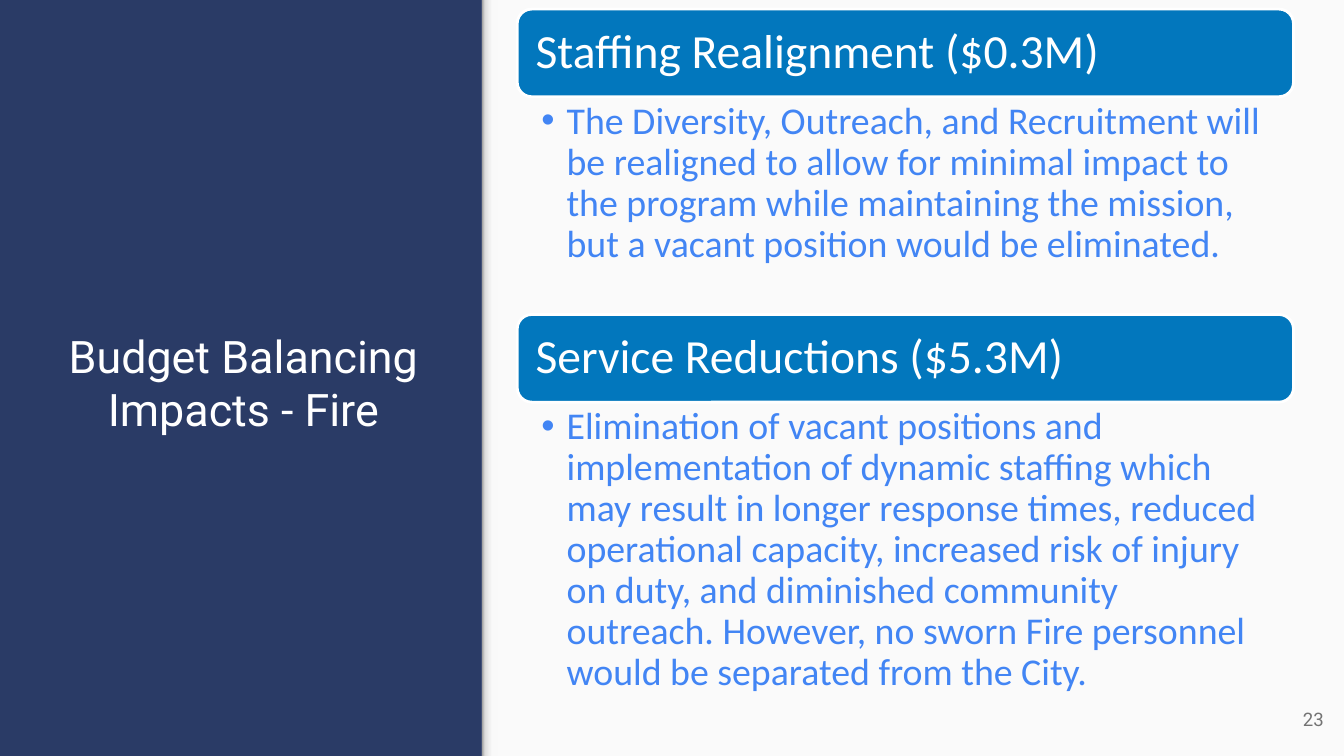
from dataclasses import dataclass

from lxml.etree import SubElement
from pptx import Presentation
from pptx.dml.color import RGBColor
from pptx.enum.shapes import MSO_SHAPE
from pptx.enum.text import MSO_ANCHOR, MSO_AUTO_SIZE, PP_ALIGN
from pptx.oxml.ns import qn
from pptx.shapes.autoshape import Shape
from pptx.slide import Slide
from pptx.util import Emu, Pt

EMU_PER_PX = 9144  # 100 px to the inch
SLIDE_W, SLIDE_H = 1333, 750
PANEL_X = 478
EDGE_W = 16
CARD_X, CARD_W, HEADER_H = 513, 770, 87


@dataclass(frozen=True)
class Theme:
    navy: str = "2A3B66"
    panel: str = "FAFAFA"
    header: str = "0277BD"
    body: str = "4285F4"
    white: str = "FFFFFF"
    grey: str = "737373"
    edge: tuple[tuple[int, str], ...] = (
        (0, "999999"), (20, "DEDEDE"), (64, "F9F9F9"), (100, "F9F9F9"))
    title_font: str = "Roboto"
    card_font: str = "Calibri"
    title_size: float = 32
    header_size: float = 34
    body_size: float = 27
    number_size: float = 13.3


@dataclass(frozen=True)
class Card:
    top: int
    body_h: int
    heading: str
    detail: str


THEME = Theme()
CARDS = (
    Card(9, 216, "Staffing Realignment ($0.3M)",
         "The Diversity, Outreach, and Recruitment will be realigned to allow "
         "for minimal impact to the program while maintaining the mission, but "
         "a vacant position would be eliminated."),
    Card(312, 285, "Service Reductions ($5.3M)",
         "Elimination of vacant positions and implementation of dynamic "
         "staffing which may result in longer response times, reduced "
         "operational capacity, increased risk of injury on duty, and "
         "diminished community outreach. However, no sworn Fire personnel "
         "would be separated from the City."),
)


def px(n: int) -> Emu:
    return Emu(n * EMU_PER_PX)


def rgb(color: str) -> RGBColor:
    return RGBColor.from_string(color)


def write(s: Shape, text: str, *, font: str, size: float, color: str,
          align: PP_ALIGN = PP_ALIGN.LEFT,
          anchor: MSO_ANCHOR = MSO_ANCHOR.MIDDLE,
          insets: tuple[int, int, int, int] = (10, 10, 10, 10),
          spacing: float = 1.0, bullet: bool = False) -> None:
    """Fill a shape with one paragraph; insets are left, top, right, bottom."""
    tf = s.text_frame
    tf.word_wrap = True
    tf.auto_size = MSO_AUTO_SIZE.NONE
    tf.vertical_anchor = anchor
    tf.margin_left, tf.margin_top, tf.margin_right, tf.margin_bottom = map(
        px, insets)
    p = tf.paragraphs[0]
    p.alignment = align
    p.line_spacing = spacing
    if bullet:
        pPr = p._p.get_or_add_pPr()
        pPr.set("marL", str(px(25)))
        pPr.set("indent", str(px(-25)))
        SubElement(pPr, qn("a:buFont"), typeface="Arial")
        SubElement(pPr, qn("a:buChar"), char="•")
    r = p.add_run()
    r.text = text
    r.font.name = font
    r.font.size = Pt(size)
    r.font.color.rgb = rgb(color)


def add_block(slide: Slide, kind: MSO_SHAPE, x: int, y: int, w: int, h: int,
              fill: str) -> Shape:
    s = slide.shapes.add_shape(kind, px(x), px(y), px(w), px(h))
    s.shadow.inherit = False
    s.fill.solid()
    s.fill.fore_color.rgb = rgb(fill)
    s.line.fill.background()
    return s


def add_text(slide: Slide, x: int, y: int, w: int, h: int) -> Shape:
    return slide.shapes.add_textbox(px(x), px(y), px(w), px(h))


def add_panel(slide: Slide) -> None:
    """Draw the light panel and the soft shade along its left edge."""
    add_block(slide, MSO_SHAPE.RECTANGLE, PANEL_X, 0, SLIDE_W - PANEL_X,
              SLIDE_H, THEME.panel)
    s = add_block(slide, MSO_SHAPE.RECTANGLE, PANEL_X, 0, EDGE_W, SLIDE_H,
                  THEME.panel)
    s.fill.gradient()
    s.fill.gradient_angle = 0
    stops = s._element.spPr.find(qn("a:gradFill")).find(qn("a:gsLst"))
    for stop in list(stops):
        stops.remove(stop)
    for percent, color in THEME.edge:
        stop = SubElement(stops, qn("a:gs"), pos=str(percent * 1000))
        SubElement(stop, qn("a:srgbClr"), val=color)


def add_card(slide: Slide, card: Card) -> None:
    s = add_block(slide, MSO_SHAPE.ROUNDED_RECTANGLE, CARD_X, card.top, CARD_W,
                  HEADER_H, THEME.header)
    s.line.color.rgb = rgb(THEME.white)
    s.line.width = Pt(2)
    write(s, card.heading, font=THEME.card_font, size=THEME.header_size,
          color=THEME.white, insets=(14, 14, 14, 14), spacing=0.9)
    sp = add_text(slide, CARD_X, card.top + HEADER_H, CARD_W, card.body_h)
    write(sp, card.detail, font=THEME.card_font, size=THEME.body_size,
          color=THEME.body, anchor=MSO_ANCHOR.TOP, insets=(24, 5, 26, 5),
          spacing=0.9, bullet=True)


def main() -> None:
    prs = Presentation()
    prs.slide_width, prs.slide_height = px(SLIDE_W), px(SLIDE_H)
    slide = prs.slides.add_slide(prs.slide_layouts.get_by_name("Title Only"))
    slide.background.fill.solid()
    slide.background.fill.fore_color.rgb = rgb(THEME.navy)
    add_panel(slide)

    title = slide.shapes.title
    title.left, title.top, title.width, title.height = map(
        px, (37, 284, 409, 190))
    write(title, "Budget Balancing Impacts - Fire", font=THEME.title_font,
          size=THEME.title_size, color=THEME.white, align=PP_ALIGN.CENTER)

    for card in CARDS:
        add_card(slide, card)
    write(add_text(slide, 1243, 685, 80, 57), "23", font=THEME.title_font,
          size=THEME.number_size, color=THEME.grey, align=PP_ALIGN.RIGHT)
    prs.save("out.pptx")


if __name__ == "__main__":
    main()
